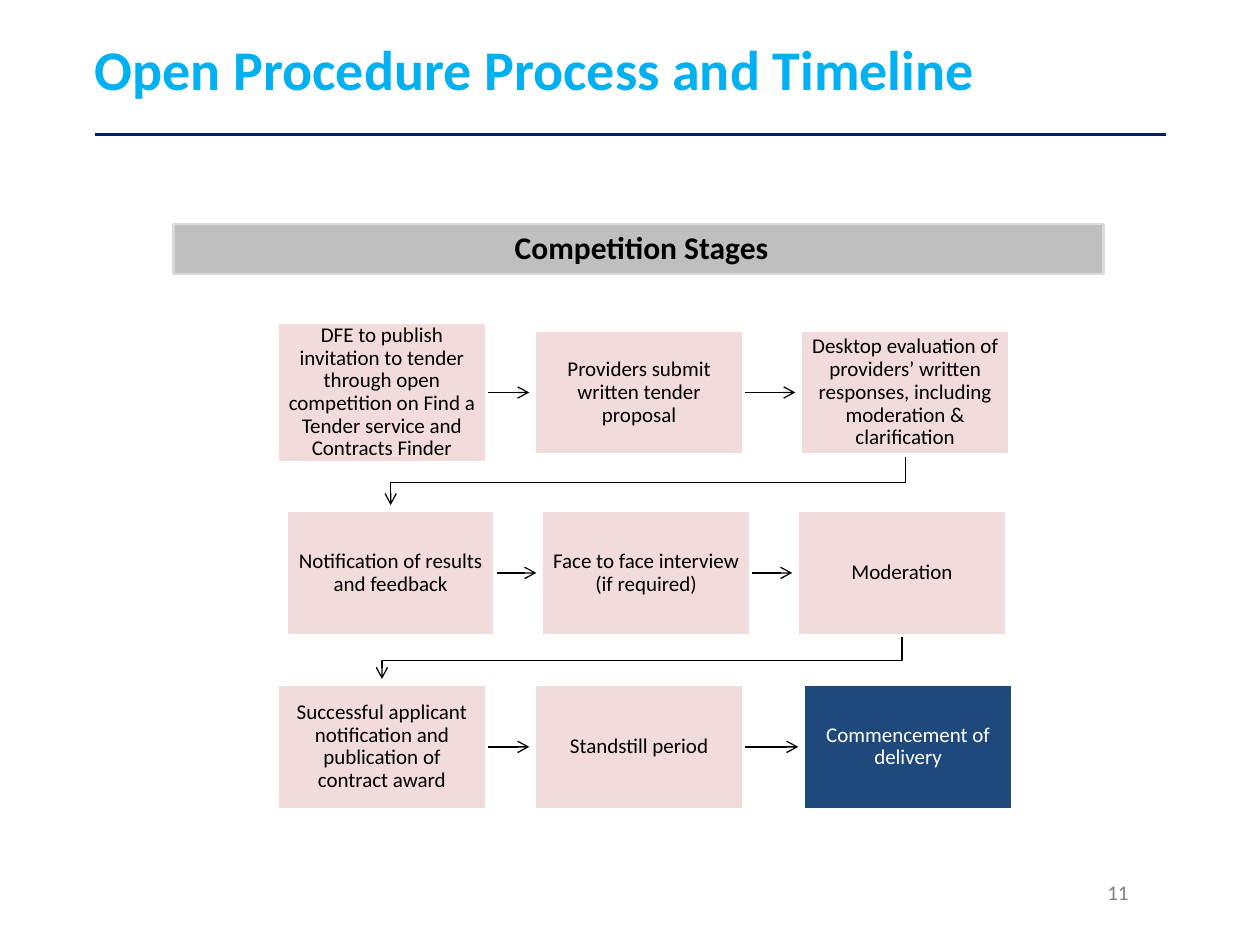
from lxml import etree
from pptx import Presentation
from pptx.dml.color import RGBColor
from pptx.enum.shapes import MSO_CONNECTOR as Connector, MSO_SHAPE as Shape
from pptx.enum.text import MSO_ANCHOR as Anchor, PP_ALIGN as Align
from pptx.oxml.ns import qn
from pptx.util import Pt

COLORS = {
    "title": "00B0F0", "rule": "002060", "stage": "F2DCDB", "final": "1F497D",
    "bar": "BFBFBF", "bar_edge": "DADADA", "black": "000000",
    "white": "FFFFFF", "number": "808080",
}
BOX_WIDTH, BOX_HEIGHT = 119.5, 71.5
ARROW_GAP = 3


def write(shape, text, size=12, color="black", bold=False, align=Align.CENTER,
          anchor=Anchor.MIDDLE, insets=(6.5, 6.5, 6.5, 6.5), spacing=1):
    frame = shape.text_frame
    frame.word_wrap = True
    frame.vertical_anchor = anchor
    frame.margin_left, frame.margin_top, frame.margin_right, frame.margin_bottom = map(Pt, insets)
    para = frame.paragraphs[0]
    para.alignment = align
    para.line_spacing = spacing
    span = para.add_run()
    span.text = text
    span.font.name = "Calibri"
    span.font.size = Pt(size)
    span.font.bold = bold
    span.font.color.rgb = RGBColor.from_string(COLORS[color])


def style_line(shape, color, width, arrow=False):
    shape.line.color.rgb = RGBColor.from_string(COLORS[color])
    shape.line.width = Pt(width)
    properties = shape.element.spPr
    if properties.find(qn("a:effectLst")) is None:
        etree.SubElement(properties, qn("a:effectLst"))
    if arrow:
        etree.SubElement(properties.find(qn("a:ln")), qn("a:tailEnd"), type="arrow")


deck = Presentation()
deck.slide_width, deck.slide_height = Pt(720), Pt(540)
page = deck.slides.add_slide(deck.slide_layouts[5])

# Title and rule
title = page.shapes.title
title.left, title.top, title.width, title.height = Pt(54), Pt(13.7), Pt(612), Pt(51)
write(title, "Open Procedure Process and Timeline", size=32, color="title",
      bold=True, align=Align.LEFT, insets=(0, 3.6, 2.9, 3.6))
rule = page.shapes.add_connector(Connector.STRAIGHT, Pt(54), Pt(77), Pt(666), Pt(77))
style_line(rule, "rule", 1.5)

# Heading bar
bar = page.shapes.add_shape(Shape.RECTANGLE, Pt(99), Pt(128), Pt(531.5), Pt(28.5))
bar.fill.solid()
bar.fill.fore_color.rgb = RGBColor.from_string(COLORS["bar"])
style_line(bar, "bar_edge", 1.5)
write(bar, "Competition Stages", size=18, bold=True, insets=(10.8, 2.6, 7.2, 4.6))

# Stage boxes: centre height, then left edge and text of each box
stage_rows = [
    (224.3, [
        (158.5, "DFE to publish invitation to tender through open competition "
                "on Find a Tender service and Contracts Finder"),
        (305.5, "Providers submit written tender proposal"),
        (457.5, "Desktop evaluation of providers’ written responses, "
                "including moderation & clarification"),
    ]),
    (327.4, [
        (163.5, "Notification of results and feedback"),
        (309.5, "Face to face interview (if required)"),
        (455.7, "Moderation"),
    ]),
    (426.8, [
        (158.5, "Successful applicant notification and publication of contract award"),
        (305.5, "Standstill period"),
        (459.2, "Commencement of delivery"),
    ]),
]
box_rows = []
for middle, stages in stage_rows:
    boxes = []
    for left, text in stages:
        height = 80 if text.startswith("DFE") else BOX_HEIGHT
        final = text.startswith("Commencement")
        box = page.shapes.add_shape(Shape.RECTANGLE, Pt(left), Pt(middle - height / 2),
                                    Pt(BOX_WIDTH), Pt(height))
        box.fill.solid()
        box.fill.fore_color.rgb = RGBColor.from_string(COLORS["final" if final else "stage"])
        style_line(box, "white", 2)
        write(box, text, color="white" if final else "black", spacing=0.9)
        boxes.append(box)
    box_rows.append(boxes)
first_box = box_rows[0][0]

# Arrows along each row, placed behind the boxes
for boxes in box_rows:
    for source, target in zip(boxes, boxes[1:]):
        middle = source.top + source.height // 2
        arrow = page.shapes.add_connector(Connector.STRAIGHT, source.left + source.width, middle,
                                          target.left - Pt(ARROW_GAP), middle)
        arrow.begin_connect(source, 3)
        style_line(arrow, "black", 0.75, arrow=True)
        first_box.element.addprevious(arrow.element)

# Bent arrows from the end of a row to the start of the next
for upper, lower, turn in zip(box_rows, box_rows[1:], (275.8, 377.3)):
    source, target = upper[-1], lower[0]
    start_x = source.left + source.width // 2
    # The last row is entered from the middle of its first box
    end_x = target.left + target.width // 2
    builder = page.shapes.build_freeform(start_x, source.top + source.height)
    builder.add_line_segments([(start_x, Pt(turn)), (end_x, Pt(turn)),
                               (end_x, target.top - Pt(ARROW_GAP))], close=False)
    bend = builder.convert_to_shape()
    bend.fill.background()
    style_line(bend, "black", 0.75, arrow=True)
    first_box.element.addprevious(bend.element)

# Page number
number = page.shapes.add_textbox(Pt(625.7), Pt(499), Pt(40.3), Pt(28.8))
write(number, "11", color="number", align=Align.LEFT, anchor=Anchor.TOP,
      insets=(7.2, 3.6, 7.2, 3.6))

deck.save("out.pptx")
